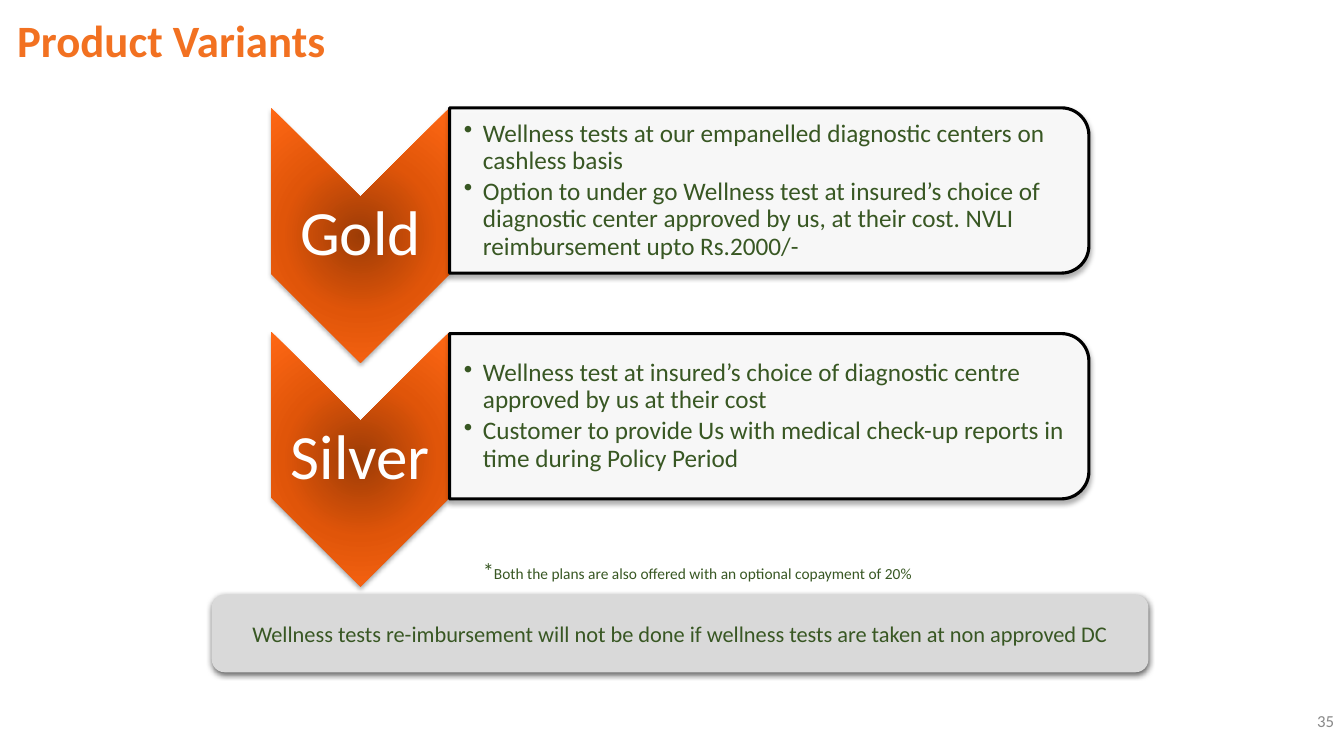
import pptx
import pptx.util
import pptx.dml.color
import pptx.enum.shapes
import pptx.enum.text
import pptx.oxml
import pptx.oxml.ns

PX = 9144
FONT = "Calibri"
ORANGE = pptx.dml.color.RGBColor(0xF2, 0x71, 0x21)
GREEN = pptx.dml.color.RGBColor(0x38, 0x57, 0x23)
GREY = pptx.dml.color.RGBColor(0x89, 0x89, 0x89)
SILVER = pptx.dml.color.RGBColor(0xD9, 0xD9, 0xD9)
WHITE = pptx.dml.color.RGBColor(0xFF, 0xFF, 0xFF)
BLACK = pptx.dml.color.RGBColor(0x00, 0x00, 0x00)
GLOW = ((0, pptx.dml.color.RGBColor(0x9D, 0x3C, 0x06)),
        (50, pptx.dml.color.RGBColor(0xE0, 0x55, 0x09)),
        (100, pptx.dml.color.RGBColor(0xFF, 0x68, 0x15)))
SHAPE = pptx.enum.shapes.MSO_SHAPE
ALIGN = pptx.enum.text.PP_ALIGN
ANCHOR = pptx.enum.text.MSO_ANCHOR
NAMESPACE = pptx.oxml.ns.nsdecls("a")

VARIANTS = (
    ("Gold", 107, 107, (
        "Wellness tests at our empanelled diagnostic centers on cashless basis",
        "Option to under go Wellness test at insured’s choice of diagnostic center "
        "approved by us, at their cost. NVLI reimbursement upto Rs.2000/-")),
    ("Silver", 329, 331, (
        "Wellness test at insured’s choice of diagnostic centre approved by us "
        "at their cost",
        "Customer to provide Us with medical check-up reports in time during "
        "Policy Period")),
)


def lengths(*values):
    """Turn px into EMU."""
    return [value * PX for value in values]


def apply(target, formats):
    """Set each attribute of the target from a dict."""
    for name, value in formats.items():
        setattr(target, name, value)


def write(shape, paragraphs, insets=(10, 5, 10, 5), anchor=ANCHOR.MIDDLE,
          bullet=False, color=GREEN, **layout):
    """Fill a shape with paragraphs of (text, size, bold) spans."""
    frame = shape.text_frame
    left, top, right, bottom = lengths(*insets)
    apply(frame, {"word_wrap": True, "vertical_anchor": anchor,
                  "margin_left": left, "margin_top": top,
                  "margin_right": right, "margin_bottom": bottom})
    for index, spans in enumerate(paragraphs):
        para = frame.add_paragraph() if index else frame.paragraphs[0]
        apply(para, layout)
        if bullet:
            properties = para._p.get_or_add_pPr()
            properties.set("marL", str(19 * PX))
            properties.set("indent", str(-19 * PX))
            properties.append(pptx.oxml.parse_xml(f'<a:buChar {NAMESPACE} char="•"/>'))
        for text, size, bold in spans:
            span = para.add_run()
            span.text = text
            apply(span.font, {"name": FONT, "size": pptx.util.Pt(size), "bold": bold})
            span.font.color.rgb = color


def label(page, box, paragraphs, **formats):
    """Add a text box in the given box."""
    write(page.shapes.add_textbox(*lengths(*box)), paragraphs, **formats)


def solid(page, kind, box, color, opacity, blur, distance):
    """Add a filled shape with a soft shadow below it."""
    shape = page.shapes.add_shape(kind, *lengths(*box))
    shape.fill.solid()
    shape.fill.fore_color.rgb = color
    shape.line.fill.background()
    shape.shadow.inherit = False
    effects = shape._element.spPr.find(pptx.oxml.ns.qn("a:effectLst"))
    effects.append(pptx.oxml.parse_xml(
        f'<a:outerShdw {NAMESPACE} blurRad="{pptx.util.Pt(blur)}" '
        f'dist="{pptx.util.Pt(distance)}" dir="5400000" rotWithShape="0">'
        f'<a:srgbClr val="{BLACK}"><a:alpha val="{opacity * 1000}"/></a:srgbClr>'
        '</a:outerShdw>'))
    return shape


def turned(page, kind, box, color):
    """Add a shape turned a quarter so that it covers the given box."""
    left, top, width, height = box
    shift = (width - height) // 2
    shape = solid(page, kind, (left + shift, top - shift, height, width),
                  color, 32, 3.5, 2.2)
    shape.rotation = 90
    return shape


def draw_chevron(page, box, name):
    """Draw the glowing chevron with the name of a variant."""
    left, top, width, height = box
    chevron = turned(page, SHAPE.CHEVRON, box, ORANGE)
    stops = "".join(f'<a:gs pos="{place * 1000}"><a:srgbClr val="{color}"/></a:gs>'
                    for place, color in GLOW)
    properties = chevron._element.spPr
    properties.replace(
        properties.find(pptx.oxml.ns.qn("a:solidFill")),
        pptx.oxml.parse_xml(
            f'<a:gradFill {NAMESPACE} rotWithShape="1"><a:gsLst>{stops}</a:gsLst>'
            '<a:path path="circle"><a:fillToRect l="50000" t="50000" r="50000" '
            'b="50000"/></a:path></a:gradFill>'))
    label(page, (left, top + 88, width, 76), [[(name, 45, False)]],
          insets=(3, 3, 3, 3), color=WHITE, alignment=ALIGN.CENTER, line_spacing=0.9)


def draw_panel(page, box, points):
    """Draw the outlined panel with the points of a variant."""
    left, top, width, height = box
    panel = turned(page, SHAPE.ROUND_2_SAME_RECTANGLE, box, WHITE)
    color = panel._element.spPr.find(pptx.oxml.ns.qn("a:solidFill"))[0]
    color.append(pptx.oxml.parse_xml(f'<a:alpha {NAMESPACE} val="90000"/>'))
    panel.line.color.rgb = BLACK
    panel.line.width = pptx.util.Pt(2.25)
    label(page, (left, top + 8, width - 8, height - 16),
          [[(point, 18, False)] for point in points], insets=(14, 1, 1, 1),
          bullet=True, line_spacing=0.9, space_after=pptx.util.Pt(2.7))


def draw_notes(page, box):
    """Draw the grey notice and the copayment remark above it."""
    left, top, width, height = box
    notice = solid(page, SHAPE.ROUNDED_RECTANGLE, box, SILVER, 63, 4.5, 1.5)
    write(notice, [[("Wellness tests re-imbursement will not be done if wellness tests "
                     "are taken at non approved DC", 16, False)]],
          alignment=ALIGN.CENTER)
    label(page, (left + 259, top - 42, 486, 67),
          [[("*", 16, False),
            ("Both the plans are also offered with an optional copayment of 20%",
             11, False)]], anchor=ANCHOR.TOP)


def draw_frame(page, box):
    """Draw the title and the page number."""
    left, top, width, height = box
    label(page, (left + 10, top + 8, 1200, 70), [[("Product Variants", 32, True)]],
          insets=(7, 4, 7, 4), color=ORANGE, line_spacing=0.9)
    label(page, (left + width - 300, top + height - 55, 300, 40), [[("35", 12, False)]],
          color=GREY, alignment=ALIGN.RIGHT)


def main():
    """Build the deck and save it."""
    deck = pptx.Presentation()
    deck.slide_width, deck.slide_height = lengths(1333, 750)
    page = deck.slides.add_slide(deck.slide_layouts[6])
    draw_frame(page, (0, 0, 1333, 750))
    for name, chevron_top, panel_top, points in VARIANTS:
        draw_chevron(page, (269, chevron_top, 177, 253), name)
        draw_panel(page, (446, panel_top, 634, 164), points)
    draw_notes(page, (210, 590, 929, 77))
    deck.save("out.pptx")


if __name__ == "__main__":
    main()
